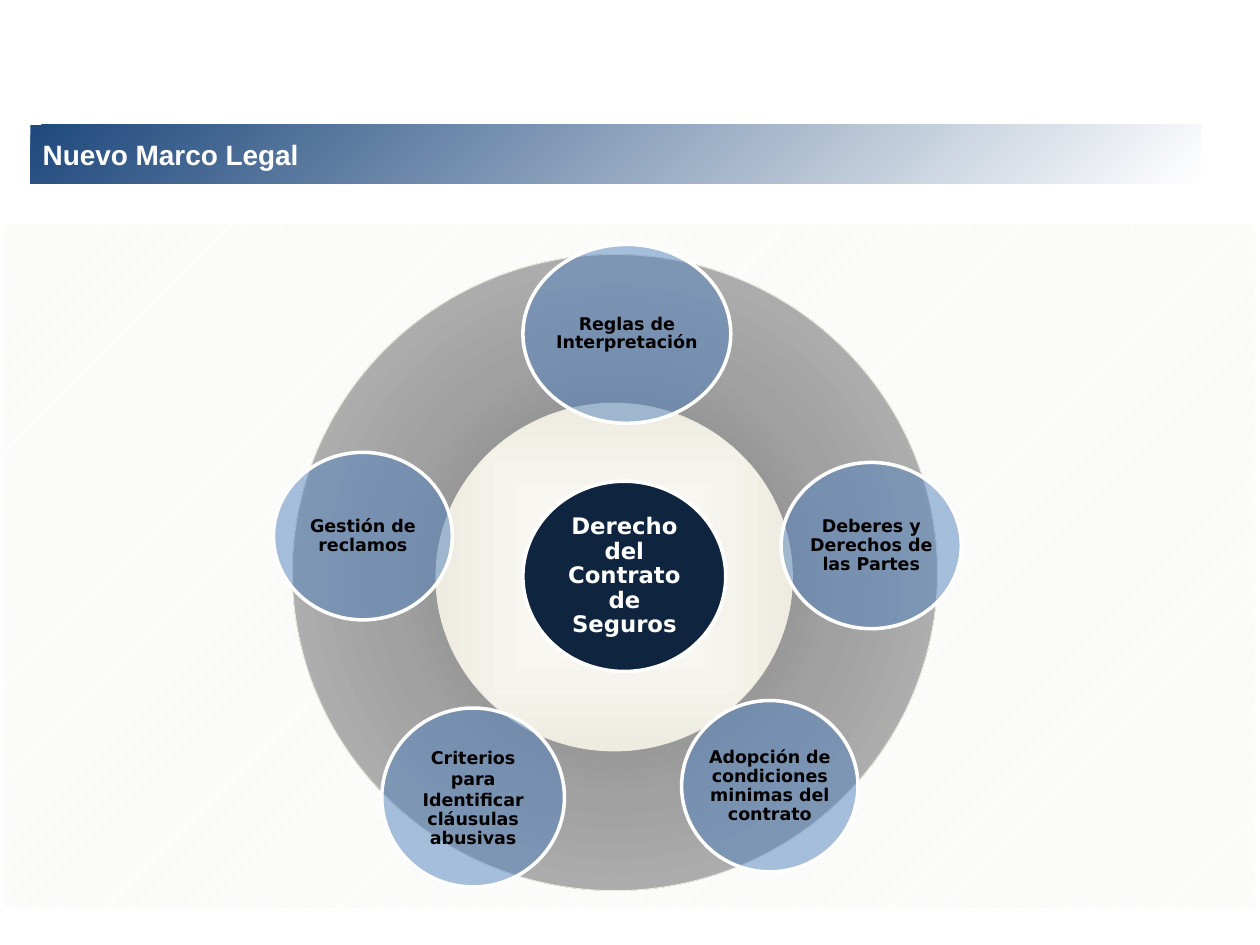
"""Build the slide on the new legal framework for insurance contracts."""
from dataclasses import dataclass

from lxml.etree import SubElement
from pptx import Presentation
from pptx.dml.color import RGBColor
from pptx.enum.dml import MSO_PATTERN
from pptx.enum.shapes import MSO_SHAPE
from pptx.enum.text import MSO_ANCHOR, PP_ALIGN
from pptx.oxml.ns import qn
from pptx.util import Inches, Pt


@dataclass(frozen=True)
class Theme:
    """Colours, fonts and type sizes of the slide."""
    white: str = "FFFFFF"
    black: str = "000000"
    cream: str = "EEECE1"
    navy: str = "0F243E"
    bar: str = "1F497D"
    petal: str = "4F81BD"
    ring: tuple = ((0, "717171"), (50, "A1A1A1"), (100, "BFBFBF"))
    title_font: str = "Arial"
    label_font: str = "DejaVu Sans"
    title_size: int = 16
    hub_size: int = 13
    label_size: int = 10


THEME = Theme()
WIDTH, HEIGHT = Inches(10), Inches(7.5)
CENTRE, BOTTOM_RIGHT = (50, 50, 50, 50), (100, 100, 0, 0)
PETALS = [
    ((62, 48.93, 14.3, 17.6), ["Deberes y Derechos de las Partes"]),
    ((21.7, 47.87, 14.2, 17.73), ["Gestión de reclamos"]),
    ((30.3, 74.93, 14.5, 18.93), ["Criterios para Identificar", "cláusulas abusivas"]),
    ((41.5, 25.87, 16.5, 18.93), ["Reglas de Interpretación"]),
    ((54.1, 74.13, 14, 18.13), ["Adopción de condiciones minimas del contrato"]),
]


def rgb(value):
    """Turn a hex string into a colour."""
    return RGBColor.from_string(value)


def add_area(page, kind, shares):
    """Add a shape placed by percentages of the slide's width and height."""
    sizes = (WIDTH, HEIGHT, WIDTH, HEIGHT)
    shape = page.shapes.add_shape(
        kind, *(round(size * share / 100) for size, share in zip(sizes, shares)))
    shape.shadow.inherit = False
    shape.line.fill.background()
    return shape


def outline(shape, colour, points):
    """Give a shape a plain outline."""
    shape.line.color.rgb = rgb(colour)
    shape.line.width = Pt(points)


def fill_solid(shape, colour, opacity=100):
    """Fill a shape with one colour, optionally translucent."""
    shape.fill.solid()
    shape.fill.fore_color.rgb = rgb(colour)
    if opacity < 100:
        tone = shape.fill._xPr.find(qn("a:solidFill"))[0]
        SubElement(tone, qn("a:alpha"), val=str(opacity * 1000))


def fill_path(shape, stops, path, focus):
    """Fill a shape with a gradient that spreads from a focus rectangle."""
    shape.fill.gradient()
    gradient = shape.fill._xPr.find(qn("a:gradFill"))
    for child in list(gradient):
        gradient.remove(child)
    stop_list = SubElement(gradient, qn("a:gsLst"))
    for position, colour in stops:
        stop = SubElement(stop_list, qn("a:gs"), pos=str(position * 1000))
        SubElement(stop, qn("a:srgbClr"), val=colour)
    spread = SubElement(gradient, qn("a:path"), path=path)
    edges = {side: str(share * 1000) for side, share in zip("ltrb", focus)}
    SubElement(spread, qn("a:fillToRect"), edges)


def add_span(para, text, font, size, colour):
    """Add one bold run to a paragraph."""
    span = para.add_run()
    span.text = text
    span.font.name = font
    span.font.size = Pt(size)
    span.font.bold = True
    span.font.color.rgb = rgb(colour)


def add_disc(page, shares, lines, size, colour, fill, opacity=100, inset=0.01):
    """Add a white-rimmed ellipse with centred text."""
    disc = add_area(page, MSO_SHAPE.OVAL, shares)
    fill_solid(disc, fill, opacity)
    outline(disc, THEME.white, 2)
    frame = disc.text_frame
    frame.word_wrap = True
    frame.vertical_anchor = MSO_ANCHOR.MIDDLE
    frame.margin_left = frame.margin_right = Inches(inset)
    frame.margin_top = frame.margin_bottom = Inches(inset)
    for index, line in enumerate(lines):
        para = frame.add_paragraph() if index else frame.paragraphs[0]
        para.alignment = PP_ALIGN.CENTER
        para.line_spacing = 0.9 if index == len(lines) - 1 else 1.0
        add_span(para, line, THEME.label_font, size, colour)


def add_backdrop(page):
    """Add the hatched panel behind the diagram."""
    panel = add_area(page, MSO_SHAPE.RECTANGLE, (0.3, 23.73, 99.3, 72.4))
    panel.fill.patterned()
    panel.fill.pattern = MSO_PATTERN.DARK_UPWARD_DIAGONAL
    panel.fill.fore_color.rgb = rgb(THEME.cream)
    panel.fill.back_color.rgb = rgb(THEME.white)


def add_ring(page, shares, stops, path):
    """Add a large disc with a gradient from its centre."""
    ring = add_area(page, MSO_SHAPE.OVAL, shares)
    fill_path(ring, stops, path, CENTRE)
    outline(ring, THEME.cream, 0.5)


def add_title(page, text):
    """Add the title bar that fades to the bottom right."""
    bar = add_area(page, MSO_SHAPE.RECTANGLE, (2.4, 13.2, 92.9, 6.27))
    fill_path(bar, ((0, THEME.white), (100, THEME.bar)), "circle", BOTTOM_RIGHT)
    bar.text_frame.word_wrap = True
    bar.text_frame.vertical_anchor = MSO_ANCHOR.MIDDLE
    para = bar.text_frame.paragraphs[0]
    para.alignment = PP_ALIGN.LEFT
    add_span(para, text, THEME.title_font, THEME.title_size, THEME.white)


def main():
    """Build and save the deck."""
    deck = Presentation()
    deck.slide_width, deck.slide_height = WIDTH, HEIGHT
    page = deck.slides.add_slide(deck.slide_layouts[6])
    add_backdrop(page)
    add_ring(page, (23.2, 26.93, 51.2, 67.33), THEME.ring, "circle")
    add_ring(page, (34.6, 42.67, 28.3, 36.8),
             ((0, THEME.white), (100, THEME.cream)), "shape")
    add_disc(page, (41.5, 50.93, 16.1, 20.13), ["Derecho del Contrato de Seguros"],
             THEME.hub_size, THEME.white, THEME.navy, inset=0.02)
    for shares, lines in PETALS:
        add_disc(page, shares, lines, THEME.label_size, THEME.black, THEME.petal, 50)
    add_title(page, "Nuevo Marco Legal")
    deck.save("out.pptx")


if __name__ == "__main__":
    main()
